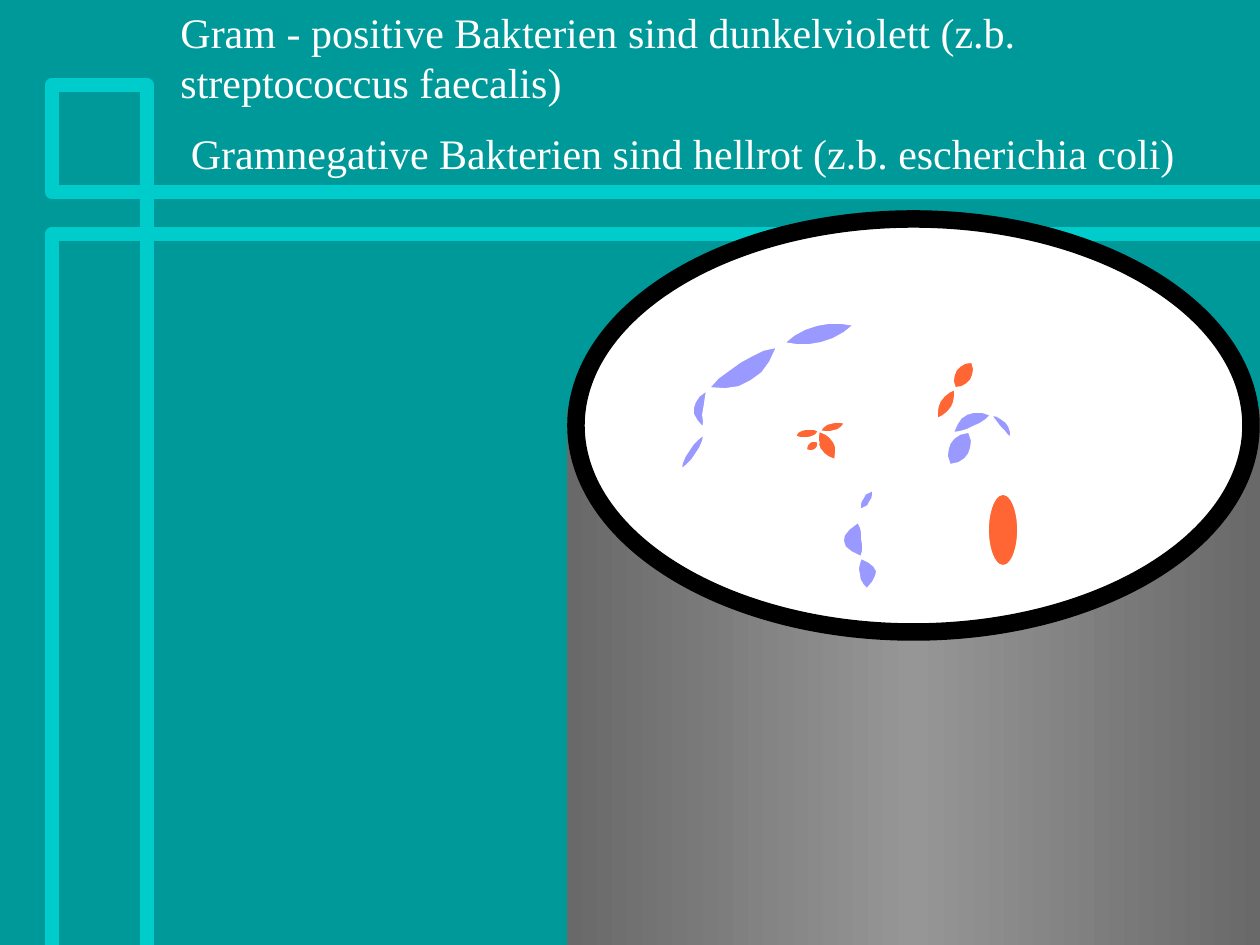
import copy
import math
import typing

import pptx
import pptx.dml.color
import pptx.enum.shapes
import pptx.oxml
import pptx.util

PX = 914400 / 126
TEAL = pptx.dml.color.RGBColor(0x00, 0x99, 0x99)
TURQUOISE = pptx.dml.color.RGBColor(0x00, 0xCC, 0xCC)
DARK_GREY = pptx.dml.color.RGBColor(0x69, 0x69, 0x69)
LIGHT_GREY = pptx.dml.color.RGBColor(0x96, 0x96, 0x96)
WHITE = pptx.dml.color.RGBColor(0xFF, 0xFF, 0xFF)
BLACK = pptx.dml.color.RGBColor(0x00, 0x00, 0x00)
VIOLET = pptx.dml.color.RGBColor(0x99, 0x99, 0xFF)
RED = pptx.dml.color.RGBColor(0xFF, 0x66, 0x33)
OVAL = pptx.enum.shapes.MSO_SHAPE.OVAL
RECTANGLE = pptx.enum.shapes.MSO_SHAPE.RECTANGLE

STAINING_RESULTS = [
    "Gram - positive Bakterien sind dunkelviolett (z.b. streptococcus faecalis)",
    " Gramnegative Bakterien sind hellrot (z.b. escherichia coli)",
]


class Cell(typing.NamedTuple):
    """One bacterium between two tips, with its thickness and sideways bend."""

    start: tuple
    end: tuple
    thickness: int
    bend: int = 0


class Colony(typing.NamedTuple):
    """Cells of one stain that hang together, placed within the opening."""

    left: int
    top: int
    stain: pptx.dml.color.RGBColor
    cells: list


LONG_CHAIN = Colony(112, 97, VIOLET, [
    Cell((105, 27), (175, 9), 18),
    Cell((30, 72), (98, 31), 22, 5),
    Cell((28, 74), (24, 112), 11, 7),
    Cell((25, 118), (2, 154), 9),
])
SHORT_CHAIN = Colony(275, 270, VIOLET, [
    Cell((18, 21), (31, 1), 9),
    Cell((16, 33), (19, 68), 20, 7),
    Cell((19, 69), (25, 100), 18, -4),
])
CURVED_CHAIN = Colony(381, 192, VIOLET, [
    Cell((5, 22), (43, 4), 15, -4),
    Cell((43, 4), (63, 27), 8, -3),
    Cell((21, 21), (2, 54), 22),
])
ROD_CLUSTER = Colony(228, 198, RED, [
    Cell((25, 14), (50, 6), 9),
    Cell((24, 14), (0, 19), 9),
    Cell((24, 14), (40, 43), 15),
    Cell((24, 25), (11, 33), 9),
])
ROD_PAIR = Colony(367, 143, RED, [
    Cell((21, 26), (38, 0), 17),
    Cell((21, 27), (3, 57), 13),
])
COLONIES = [LONG_CHAIN, SHORT_CHAIN, CURVED_CHAIN, ROD_CLUSTER, ROD_PAIR]


def px(length):
    """Turn whole pixels into EMU."""
    return pptx.util.Emu(round(length * PX))


def paint(shape, fill, line, width):
    """Give a shape its fill and outline, without shadow."""
    shape.shadow.inherit = False
    if fill is None:
        shape.fill.background()
    else:
        shape.fill.solid()
        shape.fill.fore_color.rgb = fill
    shape.line.color.rgb = line
    shape.line.width = pptx.util.Pt(width)


def add_preset(slide, kind, left, top, width, height):
    """Add a preset shape measured in pixels."""
    return slide.shapes.add_shape(kind, px(left), px(top), px(width), px(height))


def add_outline(slide, left, top, contours, close=False):
    """Add one freeform of several contours, relative to its corner."""
    builder = slide.shapes.build_freeform(*contours[0][0], scale=PX)
    for contour in contours:
        if contour is not contours[0]:
            builder.move_to(*contour[0])
        builder.add_line_segments(contour[1:], close=close)
    return builder.convert_to_shape(px(left), px(top))


def cell_contour(cell, steps=6):
    """Walk along one side of a cell and back along the other."""
    (start_x, start_y), (end_x, end_y) = cell.start, cell.end
    run, rise = end_x - start_x, end_y - start_y
    length = math.hypot(run, rise)

    def edge_point(step, side):
        along = step / steps
        bulge = math.sin(math.pi * along)
        offset = cell.bend * bulge + side * cell.thickness / 2 * abs(bulge) ** 0.7
        return (
            start_x + run * along - rise / length * offset,
            start_y + rise * along + run / length * offset,
        )

    outward = [edge_point(step, 1) for step in range(steps + 1)]
    back = [edge_point(step, -1) for step in range(steps - 1, 0, -1)]
    return outward + back


def add_frame(slide, left, top, width, height):
    """Draw the two crossing turquoise frame lines."""
    upright, upper_bar, lower_bar = 95, 107, 149
    lower_frame = [(width, lower_bar), (0, lower_bar), (0, height)]
    upper_frame = [(upright, height), (upright, 0), (0, 0), (0, upper_bar), (width, upper_bar)]
    for corners in (lower_frame, upper_frame):
        frame = add_outline(slide, left, top, [corners])
        paint(frame, None, TURQUOISE, 8)
        frame.line._get_or_add_ln().append(
            pptx.oxml.parse_xml(
                '<a:round xmlns:a="http://schemas.openxmlformats.org/drawingml/2006/main"/>'
            )
        )


def add_beaker(slide, left, top, width, height):
    """Draw the grey cylinder with its round white opening."""
    rim, opening_height, wall_drop = 9, 413, 190
    cylinder = add_preset(slide, RECTANGLE, left, top + wall_drop, width, height - wall_drop)
    cylinder.shadow.inherit = False
    cylinder.line.fill.background()
    cylinder.fill.gradient()
    cylinder.fill.gradient_angle = 0
    first_stop = cylinder.fill.gradient_stops[0]._gs
    first_stop.addnext(copy.deepcopy(first_stop))
    shades = zip((0, 0.5, 1), (DARK_GREY, LIGHT_GREY, DARK_GREY))
    for stop, (position, shade) in zip(cylinder.fill.gradient_stops, shades):
        stop.position = position
        stop.color.rgb = shade
    opening = add_preset(slide, OVAL, left + rim, top, width - 2 * rim, opening_height)
    paint(opening, WHITE, BLACK, 10)


def add_bacteria(slide, left, top):
    """Scatter the stained bacteria over the opening."""
    for colony in COLONIES:
        contours = [cell_contour(cell) for cell in colony.cells]
        bacteria = add_outline(slide, left + colony.left, top + colony.top, contours, close=True)
        paint(bacteria, colony.stain, WHITE, 1)
    single_rod = add_preset(slide, OVAL, left + 421, top + 275, 30, 72)
    paint(single_rod, RED, WHITE, 1)


def add_results(slide, left, top, width, height):
    """Write the staining results as paragraphs."""
    results = slide.shapes.add_textbox(px(left), px(top), px(width), px(height)).text_frame
    results.word_wrap = True
    results.text = "\n".join(STAINING_RESULTS)
    for result in results.paragraphs:
        result.space_before = pptx.util.Pt(12)
        result.font.name = "Times New Roman"
        result.font.size = pptx.util.Pt(24)
        result.font.color.rgb = WHITE


def main():
    """Build and save the slide."""
    presentation = pptx.Presentation()
    presentation.slide_width = px(1260)
    presentation.slide_height = px(945)
    slide = presentation.slides.add_slide(presentation.slide_layouts[6])
    slide.background.fill.solid()
    slide.background.fill.fore_color.rgb = TEAL
    add_frame(slide, 52, 85, 1210, 860)
    add_beaker(slide, 567, 219, 693, 726)
    add_bacteria(slide, 567, 219)
    add_results(slide, 168, 0, 1091, 189)
    presentation.save("out.pptx")


if __name__ == "__main__":
    main()
